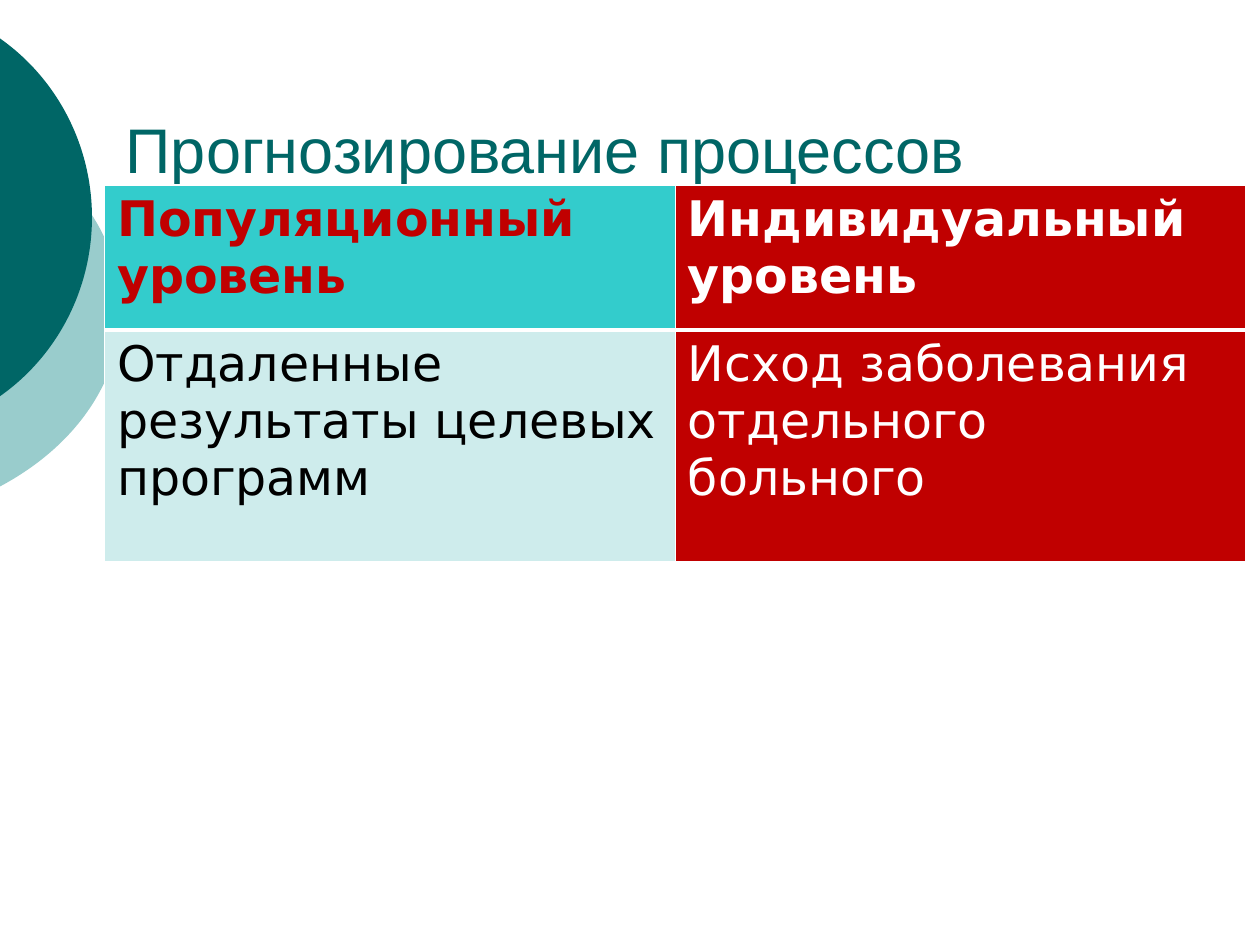
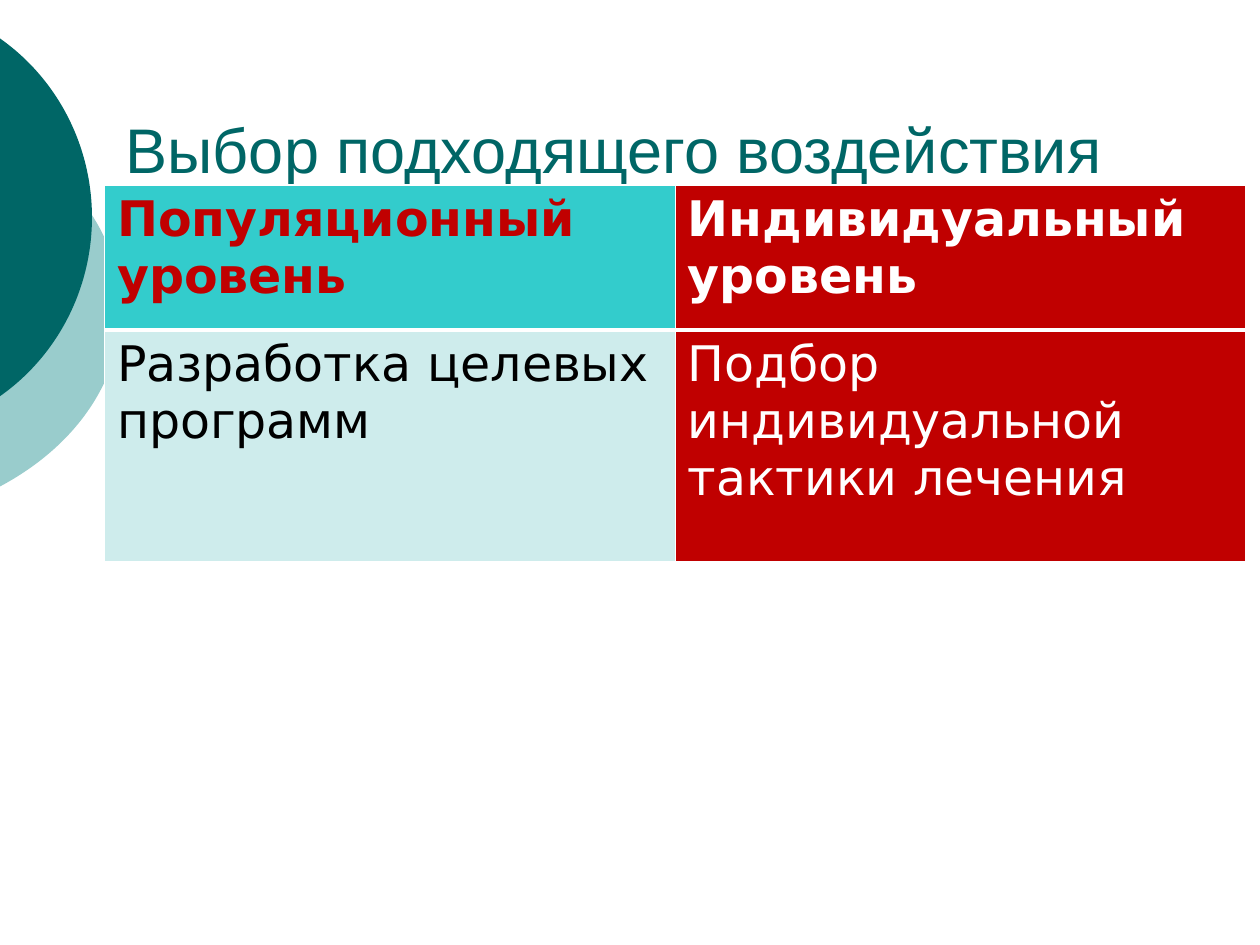
from pptx import Presentation
from pptx.dml.color import RGBColor
from pptx.enum.shapes import MSO_SHAPE as Shape
from pptx.enum.text import MSO_ANCHOR as Anchor
from pptx.oxml import parse_xml
from pptx.oxml.ns import nsdecls
from pptx.util import Inches, Pt

TEAL = RGBColor(0x00, 0x66, 0x66)
MIST = RGBColor(0x99, 0xCC, 0xCC)
AQUA = RGBColor(0x33, 0xCC, 0xCC)
PALE = RGBColor(0xCE, 0xEC, 0xEC)
RED = RGBColor(0xC0, 0x00, 0x00)
WHITE = RGBColor(0xFF, 0xFF, 0xFF)
BLACK = RGBColor(0x00, 0x00, 0x00)

HEADS = ["Популяционный уровень", "Индивидуальный уровень"]
PAGES = [
    ("Прогнозирование процессов",
     ["Отдаленные результаты целевых программ",
      "Исход заболевания отдельного больного"]),
    ("Выбор подходящего воздействия",
     ["Разработка целевых программ",
      "Подбор индивидуальной тактики лечения"]),
]
# Fill and text colour of each cell, by row
LOOKS = [[(AQUA, RED), (RED, WHITE)],
         [(PALE, BLACK), (RED, WHITE)]]
ROWS = [1.15, 1.84]


def style(frame, face, size, color, bold=False):
    font = frame.paragraphs[0].runs[0].font
    font.name = face
    font.size = Pt(size)
    font.color.rgb = color
    font.bold = bold


def add_disc(slide, left, top, width, height, color):
    disc = slide.shapes.add_shape(
        Shape.OVAL, Inches(left), Inches(top), Inches(width), Inches(height))
    disc.shadow.inherit = False
    disc.fill.solid()
    disc.fill.fore_color.rgb = color
    disc.line.fill.background()


def add_title(slide, text):
    box = slide.shapes.add_textbox(
        Inches(0.9), Inches(0.28), Inches(9.1), Inches(1.25))
    frame = box.text_frame
    frame.word_wrap = True
    frame.vertical_anchor = Anchor.BOTTOM
    frame.text = text
    style(frame, "Arial", 36, TEAL)


def add_edges(cell, top, bottom):
    """Give the cell white borders; top and bottom widths are in points."""
    props = cell._tc.get_or_add_tcPr()
    for side, width in (("L", 1), ("R", 1), ("T", top), ("B", bottom)):
        props.append(parse_xml(
            f'<a:ln{side} {nsdecls("a")} w="{Pt(width)}"><a:solidFill>'
            f'<a:srgbClr val="{WHITE}"/></a:solidFill></a:ln{side}>'))


def add_grid(slide, texts):
    table = slide.shapes.add_table(
        2, 2, Inches(0.83), Inches(1.47), Inches(9.06), Inches(sum(ROWS))).table
    table.horz_banding = False
    for r, high in enumerate(ROWS):
        table.rows[r].height = Inches(high)
        for c, (fill, ink) in enumerate(LOOKS[r]):
            cell = table.cell(r, c)
            add_edges(cell, top=3 if r else 1, bottom=1 if r else 3)
            cell.fill.solid()
            cell.fill.fore_color.rgb = fill
            cell.text_frame.text = texts[r][c]
            style(cell.text_frame, "DejaVu Sans", 28, ink, bold=r == 0)


def main():
    deck = Presentation()
    deck.slide_width, deck.slide_height = Inches(10), Inches(7.5)
    for title, body in PAGES:
        slide = deck.slides.add_slide(deck.slide_layouts[6])
        add_disc(slide, -3.54, 0.75, 4.5, 3.42, MIST)
        add_disc(slide, -2.65, 0, 3.38, 3.45, TEAL)
        add_title(slide, title)
        add_grid(slide, [HEADS, body])
    deck.save("out.pptx")


if __name__ == "__main__":
    main()
